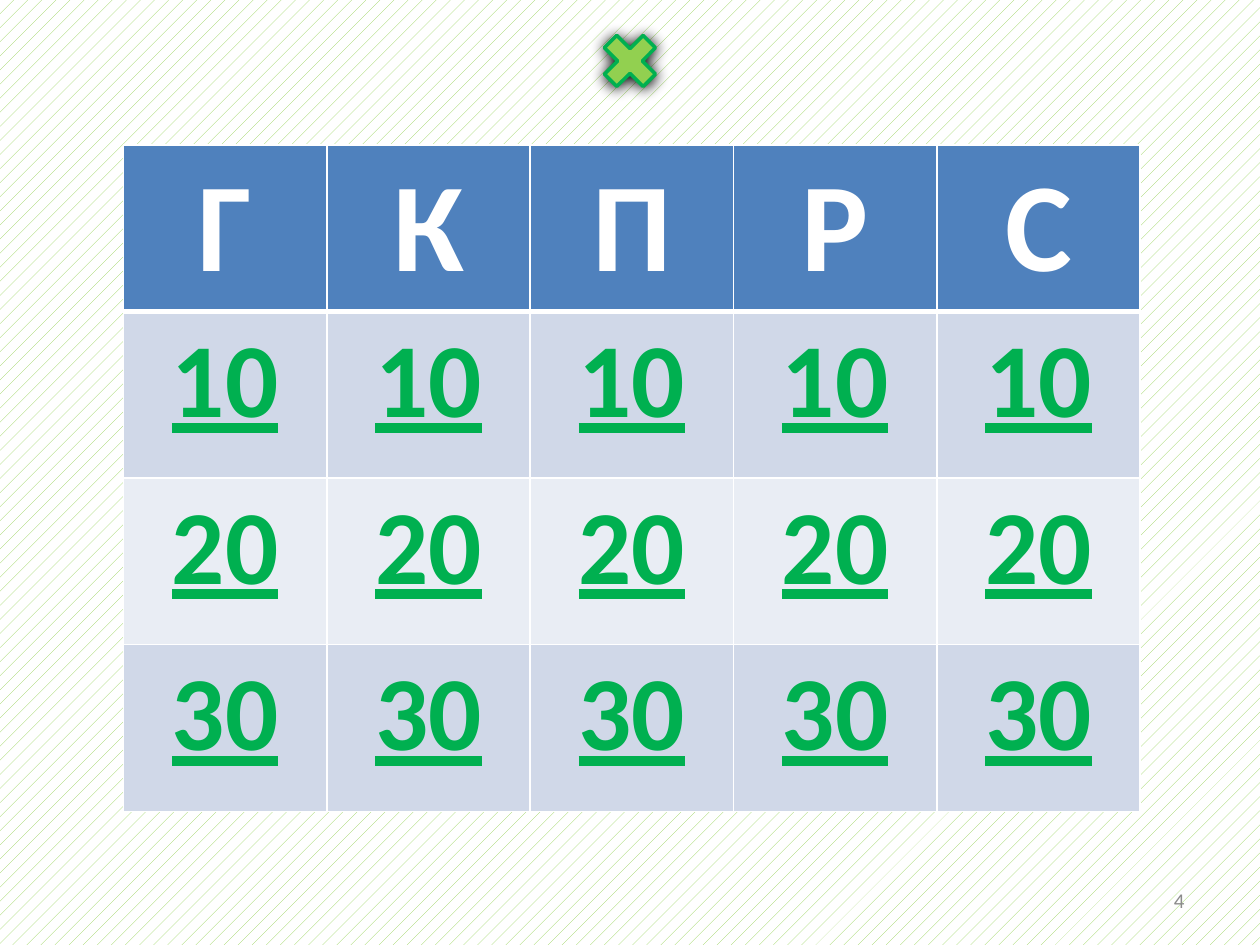
from lxml import etree
from pptx import Presentation
from pptx.dml.color import RGBColor
from pptx.enum.dml import MSO_PATTERN
from pptx.enum.shapes import MSO_SHAPE
from pptx.enum.text import MSO_ANCHOR, PP_ALIGN
from pptx.oxml.ns import qn
from pptx.util import Cm, Pt

CENTER, RIGHT = PP_ALIGN.CENTER, PP_ALIGN.RIGHT
MIDDLE = MSO_ANCHOR.MIDDLE
DOTS = MSO_PATTERN.PERCENT_10
CROSS = MSO_SHAPE.MATH_MULTIPLY

FONT = "Calibri"
WHITE, LIME, GREEN = "FFFFFF", "92D050", "00B050"
HEADER_FILL = "4F81BD"
BAND_FILLS = ("D0D8E8", "E9EDF4")

CATEGORIES = ("Г", "К", "П", "Р", "С")
POINTS = (10, 20, 30)
BLANK_LAYOUT = 6


def color(hex_value):
    return RGBColor.from_string(hex_value)


def write_text(text_frame, text, size, hex_value, alignment, bold=False, underline=False):
    text_frame.text = text
    paragraph = text_frame.paragraphs[0]
    paragraph.alignment = alignment
    font = paragraph.runs[0].font
    font.name, font.size = FONT, Pt(size)
    font.bold, font.underline = bold, underline
    font.color.rgb = color(hex_value)


def add_solid_color(parent, hex_value):
    fill = etree.SubElement(parent, qn("a:solidFill"))
    etree.SubElement(fill, qn("a:srgbClr"), val=hex_value)


def set_borders(cell, top=1, bottom=1):
    """Draw white borders, with widths in points."""
    properties = cell._tc.get_or_add_tcPr()
    sides = (("a:lnL", 1), ("a:lnR", 1), ("a:lnT", top), ("a:lnB", bottom))
    for position, (side, width) in enumerate(sides):
        line = etree.Element(qn(side), w=str(Pt(width)))
        add_solid_color(line, WHITE)
        properties.insert(position, line)


def set_background(slide):
    fill = slide.background.fill
    fill.patterned()
    fill.pattern = DOTS
    fill.fore_color.rgb = color(LIME)
    fill.back_color.rgb = color(WHITE)


def add_score_table(slide):
    rows = [CATEGORIES] + [[str(points)] * len(CATEGORIES) for points in POINTS]
    table = slide.shapes.add_table(
        len(rows), len(CATEGORIES), Cm(2.49), Cm(2.92), Cm(20.5), Cm(13.36)
    ).table
    for column in table.columns:
        column.width = Cm(4.1)
    for row_index, texts in enumerate(rows):
        is_header = row_index == 0
        table.rows[row_index].height = Cm(3.15 if is_header else 3.36)
        fill = HEADER_FILL if is_header else BAND_FILLS[(row_index - 1) % 2]
        for column_index, text in enumerate(texts):
            cell = table.cell(row_index, column_index)
            cell.fill.solid()
            cell.fill.fore_color.rgb = color(fill)
            if is_header:
                write_text(cell.text_frame, text, 72, WHITE, CENTER, bold=True)
            else:
                write_text(cell.text_frame, text, 60, GREEN, CENTER, bold=True, underline=True)
            set_borders(cell, top=3 if row_index == 1 else 1, bottom=3 if is_header else 1)


def add_slide_number(slide, number):
    box = slide.shapes.add_textbox(Cm(18.2), Cm(17.65), Cm(5.93), Cm(1.01))
    box.text_frame.word_wrap = True
    box.text_frame.vertical_anchor = MIDDLE
    write_text(box.text_frame, str(number), 12, "8C8C8C", RIGHT)


def add_shadow(shape, blur, distance, angle):
    shape.shadow.inherit = False
    effects = shape._element.spPr.find(qn("a:effectLst"))
    shadow = etree.SubElement(
        effects, qn("a:outerShdw"), blurRad=str(Pt(blur)), dist=str(Pt(distance)),
        dir=str(angle * 60000), algn="t", rotWithShape="0",
    )
    etree.SubElement(shadow, qn("a:srgbClr"), val="000000")


def add_cross(slide):
    cross = slide.shapes.add_shape(CROSS, Cm(11.95), Cm(0.48), Cm(1.5), Cm(1.5))
    cross.fill.solid()
    cross.fill.fore_color.rgb = color(LIME)
    cross.line.color.rgb = color(GREEN)
    cross.line.width = Pt(2)
    add_shadow(cross, blur=8.5, distance=1, angle=90)


def main():
    presentation = Presentation()
    presentation.slide_width, presentation.slide_height = Cm(25.4), Cm(19.05)
    slide = presentation.slides.add_slide(presentation.slide_layouts[BLANK_LAYOUT])
    set_background(slide)
    add_score_table(slide)
    add_slide_number(slide, 4)
    add_cross(slide)
    presentation.save("out.pptx")


if __name__ == "__main__":
    main()
